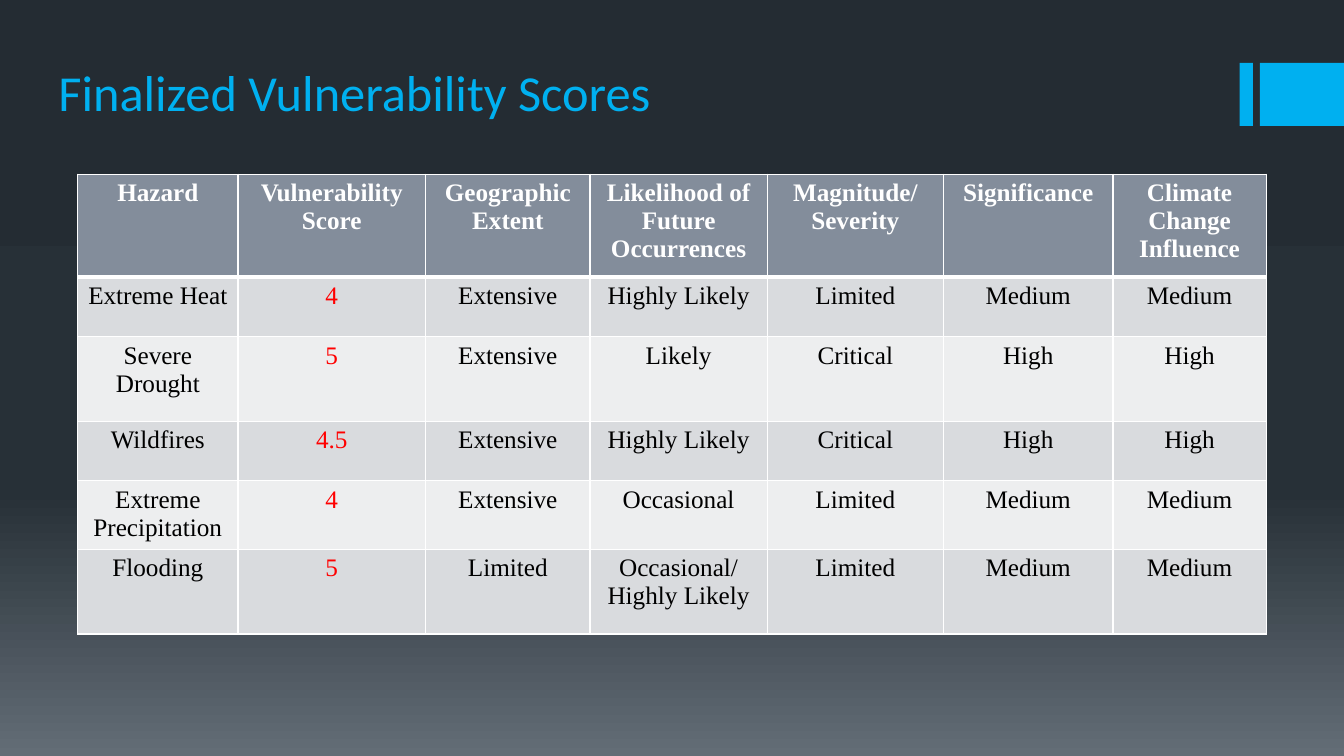
from copy import deepcopy
from dataclasses import dataclass

from lxml.etree import SubElement
from pptx import Presentation
from pptx.dml.color import RGBColor
from pptx.enum.shapes import MSO_SHAPE
from pptx.enum.text import MSO_ANCHOR, PP_ALIGN
from pptx.oxml.ns import qn
from pptx.slide import Slide
from pptx.table import _Cell
from pptx.text.text import _Run
from pptx.util import Pt

ACCENT = RGBColor(0x00, 0xB0, 0xF0)
WHITE = RGBColor(0xFF, 0xFF, 0xFF)
BLACK = RGBColor(0x00, 0x00, 0x00)
SCORE_RED = RGBColor(0xFF, 0x00, 0x00)
HEADER_FILL = RGBColor(0x83, 0x8D, 0x9B)
BAND_FILLS = (RGBColor(0xD9, 0xDB, 0xDE), RGBColor(0xED, 0xEE, 0xEF))
BACKGROUND_STOPS = (
    (0, RGBColor(0x24, 0x2C, 0x33)),
    (0.65, RGBColor(0x27, 0x30, 0x37)),
    (1, RGBColor(0x63, 0x6D, 0x76)),
)

SCORE_COLUMN = 1
COLUMN_WIDTHS = (114.5, 134, 117.5, 126.5, 126, 121, 109.5)
ROW_HEIGHTS = (73.5, 42.5, 60.5, 42.5, 49, 60.5)
SCORES = (
    ("Hazard", "Vulnerability Score", "Geographic Extent", "Likelihood of Future Occurrences",
     "Magnitude/ Severity", "Significance", "Climate Change Influence"),
    ("Extreme Heat", "4", "Extensive", "Highly Likely", "Limited", "Medium", "Medium"),
    ("Severe Drought", "5", "Extensive", "Likely", "Critical", "High", "High"),
    ("Wildfires", "4.5", "Extensive", "Highly Likely", "Critical", "High", "High"),
    ("Extreme Precipitation", "4", "Extensive", "Occasional", "Limited", "Medium", "Medium"),
    ("Flooding", "5", "Limited", "Occasional/ Highly Likely", "Limited", "Medium", "Medium"),
)


@dataclass(frozen=True)
class AccentBar:
    left: float
    width: float
    top: float = 45
    height: float = 45


@dataclass(frozen=True)
class CellStyle:
    fill: RGBColor
    color: RGBColor
    bold: bool
    top_border: float
    bottom_border: float


ACCENT_BARS = (AccentBar(885.5, 9.5), AccentBar(900, 60))


def cell_style(row: int, column: int) -> CellStyle:
    if row == 0:
        return CellStyle(HEADER_FILL, WHITE, True, 1, 3)
    color = SCORE_RED if column == SCORE_COLUMN else BLACK
    return CellStyle(BAND_FILLS[(row - 1) % 2], color, False, 3 if row == 1 else 1, 1)


def format_run(run: _Run, font_name: str, size: float, color: RGBColor, bold: bool) -> None:
    run.font.name = font_name
    run.font.size = Pt(size)
    run.font.color.rgb = color
    run.font.bold = bold


def paint_background(slide: Slide) -> None:
    fill = slide.background.fill
    fill.gradient()
    fill.gradient_angle = 270
    stop_list = slide.background._cSld.find(".//" + qn("a:gsLst"))
    stop_list.append(deepcopy(stop_list[-1]))
    for stop, (position, color) in zip(fill.gradient_stops, BACKGROUND_STOPS):
        stop.position = position
        stop.color.rgb = color


def draw_accent_bar(slide: Slide, bar: AccentBar) -> None:
    shape = slide.shapes.add_shape(
        MSO_SHAPE.RECTANGLE, Pt(bar.left), Pt(bar.top), Pt(bar.width), Pt(bar.height))
    shape.shadow.inherit = False
    shape.fill.solid()
    shape.fill.fore_color.rgb = ACCENT
    shape.line.fill.background()


def write_title(slide: Slide, text: str) -> None:
    title = slide.shapes.title
    title.left, title.top, title.width, title.height = Pt(34.5), Pt(39.5), Pt(768), Pt(51)
    text_frame = title.text_frame
    text_frame.text = text
    text_frame.word_wrap = True
    text_frame.vertical_anchor = MSO_ANCHOR.BOTTOM
    paragraph = text_frame.paragraphs[0]
    paragraph.alignment = PP_ALIGN.LEFT
    format_run(paragraph.runs[0], "Calibri", 36, ACCENT, False)


def add_borders(cell: _Cell, style: CellStyle) -> None:
    properties = cell._tc.get_or_add_tcPr()
    widths = {"a:lnL": 1, "a:lnR": 1, "a:lnT": style.top_border, "a:lnB": style.bottom_border}
    for tag, width in widths.items():
        line = SubElement(properties, qn(tag), w=str(Pt(width)))
        solid_fill = SubElement(line, qn("a:solidFill"))
        SubElement(solid_fill, qn("a:srgbClr"), val=str(WHITE))


def fill_cell(cell: _Cell, text: str, style: CellStyle) -> None:
    add_borders(cell, style)
    cell.fill.solid()
    cell.fill.fore_color.rgb = style.fill
    cell.margin_left = cell.margin_right = Pt(5)
    cell.text_frame.text = text
    paragraph = cell.text_frame.paragraphs[0]
    paragraph.alignment = PP_ALIGN.CENTER
    format_run(paragraph.runs[0], "Times New Roman", 18, style.color, style.bold)


def draw_score_table(slide: Slide) -> None:
    table = slide.shapes.add_table(
        len(ROW_HEIGHTS), len(COLUMN_WIDTHS), Pt(55.5), Pt(124.5),
        Pt(sum(COLUMN_WIDTHS)), Pt(sum(ROW_HEIGHTS))).table
    for column, width in zip(table.columns, COLUMN_WIDTHS):
        column.width = Pt(width)
    for row, height in zip(table.rows, ROW_HEIGHTS):
        row.height = Pt(height)
    for row_index, values in enumerate(SCORES):
        for column_index, text in enumerate(values):
            fill_cell(table.cell(row_index, column_index), text,
                      cell_style(row_index, column_index))


def main() -> None:
    presentation = Presentation()
    presentation.slide_width, presentation.slide_height = Pt(960), Pt(540)
    slide = presentation.slides.add_slide(presentation.slide_layouts.get_by_name("Title Only"))
    paint_background(slide)
    for bar in ACCENT_BARS:
        draw_accent_bar(slide, bar)
    write_title(slide, "Finalized Vulnerability Scores")
    draw_score_table(slide)
    presentation.save("out.pptx")


if __name__ == "__main__":
    main()
